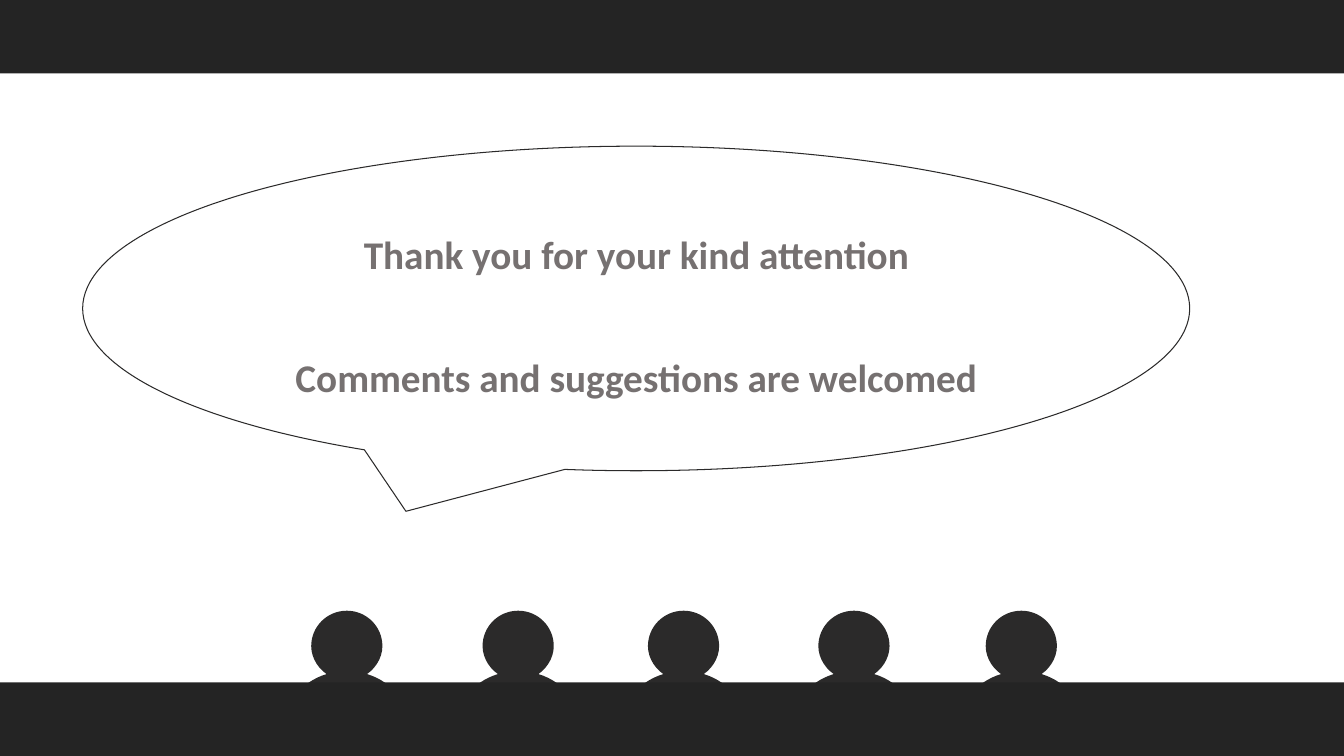
from pptx import Presentation
from pptx.dml.color import RGBColor
from pptx.enum.shapes import MSO_SHAPE
from pptx.enum.text import MSO_ANCHOR, PP_ALIGN
from pptx.oxml.ns import qn
from pptx.util import Inches, Pt

SLIDE_WIDTH, SLIDE_HEIGHT = 13.33, 7.5
BAND_HEIGHT = 0.73
BAND_COLOR, FIGURE_COLOR, TEXT_COLOR = "242424", "2B2A2A", "767171"
HEAD_CENTERS = [3.44, 5.14, 6.78, 8.47, 10.13]
FIGURE_TOP, FIGURE_WIDTH, FIGURE_HEIGHT = 6.08, 1.23, 1.14
RIGHT_HALF = [
    (0, 0),
    (0.15, 0), (0.27, 0.13), (0.27, 0.29),
    (0.27, 0.39), (0.21, 0.49), (0.12, 0.54),
    (0.33, 0.59), (0.48, 0.77), (0.5, 1),
]
MESSAGES = ["Thank you for your kind attention", "Comments and suggestions are welcomed"]


def paint(color_format, color):
    """Set a fill or font colour from a hex string."""
    color_format.rgb = RGBColor.from_string(color)


def style_outline(shape, color, width):
    """Give a shape a solid line and no shadow."""
    shape.shadow.inherit = False
    paint(shape.line.color, color)
    shape.line.width = Pt(width)


def add_band(slide, left, top, width, height):
    """Draw a plain dark band."""
    band = slide.shapes.add_shape(
        MSO_SHAPE.RECTANGLE, Inches(left), Inches(top), Inches(width), Inches(height))
    band.shadow.inherit = False
    band.fill.solid()
    paint(band.fill.fore_color, BAND_COLOR)
    band.line.fill.background()


def curve_segments(segments):
    """Turn each three consecutive line segments into one cubic curve."""
    for first, second, third in zip(segments[::3], segments[1::3], segments[2::3]):
        first.tag = qn("a:cubicBezTo")
        for segment in (second, third):
            first.append(segment[0])
            segment.getparent().remove(segment)


def add_listener(slide, left, top, width, height):
    """Draw one listener, a round head on curved shoulders."""
    left_half = [(-x, y) for x, y in reversed(RIGHT_HALF)]
    outline = [(Inches(left + width * (0.5 + x)), Inches(top + height * y))
               for x, y in RIGHT_HALF + left_half]
    builder = slide.shapes.build_freeform(*outline[0], scale=1.0)
    builder.add_line_segments(outline[1:], close=True)
    listener = builder.convert_to_shape()
    segments = list(listener._element.iter(qn("a:lnTo")))
    base = len(RIGHT_HALF) - 1
    curve_segments(segments[:base])
    curve_segments(segments[base + 1:])
    listener.fill.solid()
    paint(listener.fill.fore_color, FIGURE_COLOR)
    style_outline(listener, FIGURE_COLOR, 3)


def add_audience(slide, top, width, height):
    """Place a listener under each head centre."""
    for center in HEAD_CENTERS:
        add_listener(slide, center - width / 2, top, width, height)


def add_speech_bubble(slide, left, top, width, height):
    """Draw the speech bubble with its closing messages."""
    bubble = slide.shapes.add_shape(
        MSO_SHAPE.OVAL_CALLOUT, Inches(left), Inches(top), Inches(width), Inches(height))
    bubble.adjustments[0] = -0.208
    bubble.adjustments[1] = 0.625
    bubble.fill.background()
    style_outline(bubble, FIGURE_COLOR, 0.75)
    frame = bubble.text_frame
    frame.word_wrap = True
    frame.vertical_anchor = MSO_ANCHOR.MIDDLE
    frame.text = "\n".join(MESSAGES)
    for paragraph in frame.paragraphs:
        paragraph.alignment = PP_ALIGN.CENTER
        paragraph.line_spacing = 1.3
        for run in paragraph.runs:
            run.font.name = "Calibri"
            run.font.size = Pt(28)
            run.font.bold = True
            paint(run.font.color, TEXT_COLOR)
    frame.paragraphs[1].space_before = Pt(44)


def main():
    """Build the closing slide and save it."""
    presentation = Presentation()
    presentation.slide_width = Inches(SLIDE_WIDTH)
    presentation.slide_height = Inches(SLIDE_HEIGHT)
    slide = presentation.slides.add_slide(presentation.slide_layouts[6])
    add_audience(slide, FIGURE_TOP, FIGURE_WIDTH, FIGURE_HEIGHT)
    for top in (0, SLIDE_HEIGHT - BAND_HEIGHT):
        add_band(slide, 0, top, SLIDE_WIDTH, BAND_HEIGHT)
    add_speech_bubble(slide, 0.82, 1.45, 10.98, 3.22)
    presentation.save("out.pptx")


if __name__ == "__main__":
    main()
